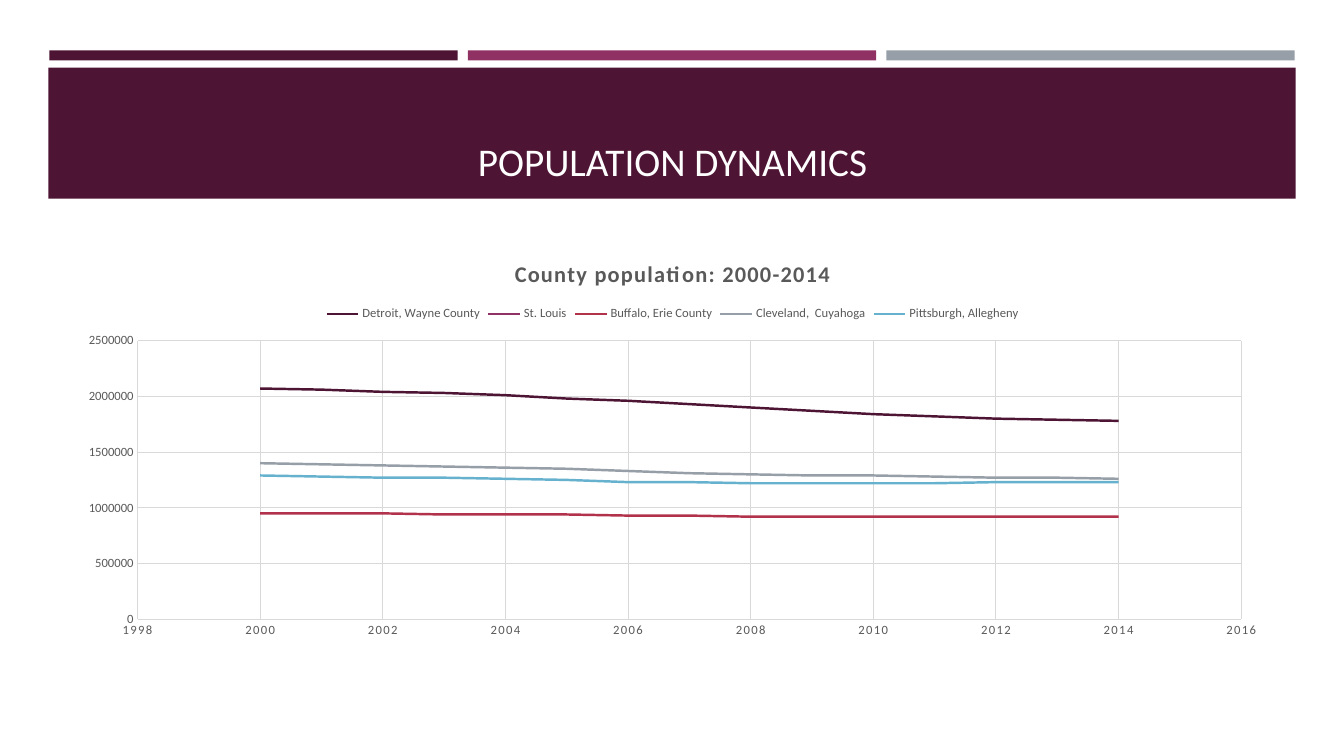
from dataclasses import dataclass

from pptx import Presentation
from pptx import util as u
from pptx.chart import data as chart_data
from pptx.dml.color import RGBColor
from pptx.enum import chart as chart_enum
from pptx.enum import shapes, text

FONT = "Calibri"
PLUM = RGBColor(0x4D, 0x14, 0x34)
MAGENTA = RGBColor(0x90, 0x31, 0x63)
RED = RGBColor(0xB2, 0x32, 0x4B)
SLATE = RGBColor(0x96, 0x9F, 0xA7)
SKY = RGBColor(0x66, 0xB1, 0xCE)
OFF_WHITE = RGBColor(0xFF, 0xFE, 0xFF)
TEXT_GREY = RGBColor(0x59, 0x59, 0x59)
GRID_GREY = RGBColor(0xD9, 0xD9, 0xD9)
YEARS = range(2000, 2015)


@dataclass(frozen=True)
class Bar:
    left: float
    top: float
    width: float
    height: float
    color: RGBColor


@dataclass(frozen=True)
class County:
    name: str
    color: RGBColor
    thousands: tuple[int | None, ...]


BARS = [
    Bar(0.49 + 4.15 * column, 0.5, 4.05, 0.1, color)
    for column, color in enumerate((PLUM, MAGENTA, SLATE))
] + [Bar(0.48, 0.67, 12.37, 1.3, PLUM)]

COUNTIES = [
    County("Detroit, Wayne County", PLUM,
           (2070, 2060, 2040, 2030, 2010, 1980, 1960, 1930,
            1900, 1870, 1840, 1820, 1800, 1790, 1780)),
    County("St. Louis", MAGENTA, (None,) * len(YEARS)),
    County("Buffalo, Erie County", RED,
           (950, 950, 950, 940, 940, 940, 930, 930,
            920, 920, 920, 920, 920, 920, 920)),
    County("Cleveland,  Cuyahoga", SLATE,
           (1400, 1390, 1380, 1370, 1360, 1350, 1330, 1310,
            1300, 1290, 1290, 1280, 1270, 1270, 1260)),
    County("Pittsburgh, Allegheny", SKY,
           (1290, 1280, 1270, 1270, 1260, 1250, 1230, 1230,
            1220, 1220, 1220, 1220, 1230, 1230, 1230)),
]


def style_font(font, size: float, color: RGBColor, bold: bool = False) -> None:
    font.name = FONT
    font.size = u.Pt(size)
    font.bold = bold
    font.color.rgb = color


def style_line(line, color: RGBColor, width: float) -> None:
    line.color.rgb = color
    line.width = u.Pt(width)


def draw_bar(slide, bar: Bar) -> None:
    shape = slide.shapes.add_shape(
        shapes.MSO_SHAPE.RECTANGLE,
        u.Inches(bar.left), u.Inches(bar.top),
        u.Inches(bar.width), u.Inches(bar.height))
    shape.shadow.inherit = False
    shape.fill.solid()
    shape.fill.fore_color.rgb = bar.color
    shape.line.fill.background()


def place_title(slide) -> None:
    title = slide.shapes.title
    title.left, title.top = u.Inches(0.64), u.Inches(0.77)
    title.width, title.height = u.Inches(12.06), u.Inches(1.11)
    title.text_frame.text = "POPULATION DYNAMICS"
    title.text_frame.vertical_anchor = text.MSO_ANCHOR.BOTTOM
    paragraph = title.text_frame.paragraphs[0]
    paragraph.alignment = text.PP_ALIGN.CENTER
    style_font(paragraph.font, 28, OFF_WHITE)
    title.element.getparent().append(title.element)


def style_axis(axis, low: int, high: int, step: int) -> None:
    axis.minimum_scale, axis.maximum_scale, axis.major_unit = low, high, step
    axis.major_tick_mark = chart_enum.XL_TICK_MARK.NONE
    axis.minor_tick_mark = chart_enum.XL_TICK_MARK.NONE
    axis.has_major_gridlines = True
    style_line(axis.major_gridlines.format.line, GRID_GREY, 0.75)
    style_line(axis.format.line, GRID_GREY, 0.75)
    style_font(axis.tick_labels.font, 9, TEXT_GREY)


def add_population_chart(slide) -> None:
    populations = chart_data.XyChartData()
    for county in COUNTIES:
        series = populations.add_series(county.name)
        for year, thousands in zip(YEARS, county.thousands):
            series.add_data_point(
                year, None if thousands is None else thousands * 1000)
    chart = slide.shapes.add_chart(
        chart_enum.XL_CHART_TYPE.XY_SCATTER_LINES_NO_MARKERS,
        u.Inches(0.64), u.Inches(2.39), u.Inches(12.06), u.Inches(4.02),
        populations).chart
    for point in chart.element.xpath(".//c:yVal//c:pt[c:v='None']"):
        point.getparent().remove(point)
    style_font(chart.font, 10, TEXT_GREY)

    chart.has_title = True
    chart.chart_title.include_in_layout = False
    chart.chart_title.text_frame.text = "County population: 2000-2014"
    style_font(chart.chart_title.text_frame.paragraphs[0].font,
               16, TEXT_GREY, bold=True)
    chart.has_legend = True
    chart.legend.position = chart_enum.XL_LEGEND_POSITION.TOP
    chart.legend.include_in_layout = False
    style_font(chart.legend.font, 9, TEXT_GREY)

    style_axis(chart.category_axis, 1998, 2016, 2)
    style_axis(chart.value_axis, 0, 2500000, 500000)
    for spaced in chart.element.xpath(
            ".//c:title//a:defRPr | .//c:valAx[1]/c:txPr//a:defRPr"):
        spaced.set("spc", "100")

    plot = chart.plots[0]
    plot.vary_by_categories = False
    for series, county in zip(plot.series, COUNTIES):
        series.smooth = False
        series.marker.style = chart_enum.XL_MARKER_STYLE.NONE
        style_line(series.format.line, county.color, 1.75)


def main() -> None:
    presentation = Presentation()
    presentation.slide_width = u.Inches(13.33)
    presentation.slide_height = u.Inches(7.5)
    slide = presentation.slides.add_slide(presentation.slide_layouts[5])
    for bar in BARS:
        draw_bar(slide, bar)
    place_title(slide)
    add_population_chart(slide)
    presentation.save("out.pptx")


if __name__ == "__main__":
    main()
